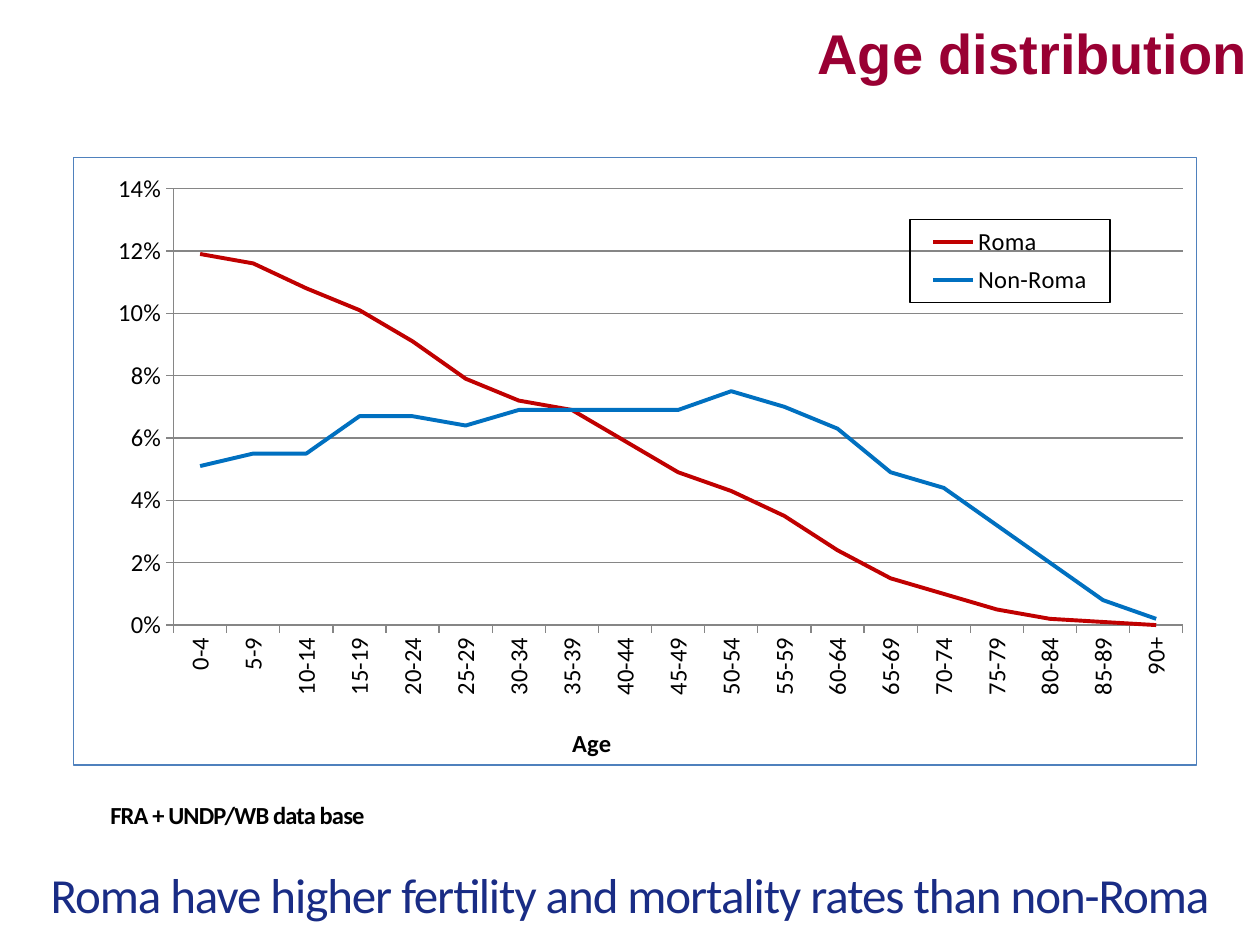
import pptx
import pptx.chart.data
import pptx.dml.color
import pptx.enum.chart
import pptx.enum.text
import pptx.oxml
import pptx.oxml.ns
import pptx.util

# Content
TITLE = "Age distribution"
SOURCE = "FRA + UNDP/WB data base"
TAKEAWAY = "Roma have higher fertility and mortality rates than non-Roma"
AGES = [f"{start}-{start + 4}" for start in range(0, 90, 5)] + ["90+"]
SERIES = [
    ("Roma", "C00000", [
        0.119, 0.116, 0.108, 0.101, 0.091, 0.079, 0.072, 0.069, 0.059, 0.049,
        0.043, 0.035, 0.024, 0.015, 0.01, 0.005, 0.002, 0.001, 0]),
    ("Non-Roma", "0070C0", [
        0.051, 0.055, 0.055, 0.067, 0.067, 0.064, 0.069, 0.069, 0.069, 0.069,
        0.075, 0.07, 0.063, 0.049, 0.044, 0.032, 0.02, 0.008, 0.002]),
]

# Places in px
SLIDE = (1260, 945)
TITLE_AT = (777, 0, 483, 105)
CHART_AT = (73, 157, 1124, 609)
NOTES_AT = (0, 766, 1260, 179)
PLOT_AT = (173, 188, 1011, 438)
LEGEND_AT = (910, 219, 200, 83)
AXIS_TITLE_AT = (568, 722)

GRID = "868686"


def px(length):
    return pptx.util.Emu(round(length * 914400 / 126))


def color(code):
    return pptx.dml.color.RGBColor.from_string(code)


def set_font(font, size, code="000000", bold=False, name="Calibri"):
    font.name, font.size, font.bold = name, pptx.util.Pt(size), bold
    font.color.rgb = color(code)


def add_span(para, text, size, code, bold, name="Calibri", spacing=0):
    span = para.add_run()
    span.text = text
    set_font(span.font, size, code, bold, name)
    if spacing:
        span.font._element.set("spc", str(spacing))


def set_line(line, code, width):
    line.color.rgb = color(code)
    line.width = pptx.util.Pt(width)


def chart_xml(markup):
    return pptx.oxml.parse_xml(
        markup.replace(">", f" {pptx.oxml.ns.nsdecls('c', 'a')}>", 1))


def outline(code):
    return chart_xml(f'<c:spPr><a:ln w="9525"><a:solidFill><a:srgbClr val="{code}"/>'
                     '</a:solidFill></a:ln></c:spPr>')


def place(element, index, at, inner=False):
    """Fix a chart part at a px position, as fractions of the chart."""
    for old in element.findall(pptx.oxml.ns.qn("c:layout")):
        element.remove(old)
    left, top, width, height = CHART_AT
    fractions = [(at[0] - left) / width, (at[1] - top) / height]
    fractions += [part / whole for part, whole in zip(at[2:], (width, height))]
    parts = '<c:layoutTarget val="inner"/>' if inner else ""
    parts += '<c:xMode val="edge"/><c:yMode val="edge"/>'
    for tag, value in zip("xywh", fractions):
        parts += f'<c:{tag} val="{value:.3f}"/>'
    element.insert(index, chart_xml(
        f"<c:layout><c:manualLayout>{parts}</c:manualLayout></c:layout>"))


deck = pptx.Presentation()
deck.slide_width, deck.slide_height = map(px, SLIDE)
page = deck.slides.add_slide(deck.slide_layouts[5])

# Title
title = page.shapes.title
title.left, title.top, title.width, title.height = map(px, TITLE_AT)
frame = title.text_frame
frame.vertical_anchor = pptx.enum.text.MSO_ANCHOR.MIDDLE
para = frame.paragraphs[0]
para.alignment = pptx.enum.text.PP_ALIGN.RIGHT
add_span(para, TITLE, 32, "990033", True, "Arial")

# Chart
data = pptx.chart.data.CategoryChartData(number_format="0%")
data.categories = AGES
for name, _, values in SERIES:
    data.add_series(name, values)
chart = page.shapes.add_chart(
    pptx.enum.chart.XL_CHART_TYPE.LINE, *map(px, CHART_AT), data).chart
chart.has_title = False
set_font(chart.font, 14)
chart.plots[0].vary_by_categories = False
for line, (_, code, _) in zip(chart.plots[0].series, SERIES):
    line.smooth = False
    line.marker.style = pptx.enum.chart.XL_MARKER_STYLE.NONE
    set_line(line.format.line, code, 2.25)
chart_element = chart._chartSpace.find(pptx.oxml.ns.qn("c:chart"))
chart_element.addnext(outline("4F81BD"))
place(chart_element.find(pptx.oxml.ns.qn("c:plotArea")), 0, PLOT_AT, inner=True)

# Axes
ages, shares = chart.category_axis, chart.value_axis
for axis in (ages, shares):
    axis.major_tick_mark = pptx.enum.chart.XL_TICK_MARK.OUTSIDE
    axis.minor_tick_mark = pptx.enum.chart.XL_TICK_MARK.NONE
    set_line(axis.format.line, GRID, 0.75)
    set_font(axis.tick_labels.font, 14)
ages._element.find(pptx.oxml.ns.qn("c:txPr"))[0].set("rot", "-5400000")
para = ages.axis_title.text_frame.paragraphs[0]
add_span(para, "Age", 14, "000000", True)
place(ages.axis_title._element, 1, AXIS_TITLE_AT)
shares.minimum_scale, shares.maximum_scale, shares.major_unit = 0, 0.14, 0.02
shares.tick_labels.number_format = "0%"
shares.tick_labels.number_format_is_linked = False
shares.has_major_gridlines = True
set_line(shares.major_gridlines.format.line, GRID, 0.75)

# Legend
chart.has_legend = True
legend = chart.legend
legend.position = pptx.enum.chart.XL_LEGEND_POSITION.RIGHT
legend.include_in_layout = False
set_font(legend.font, 14)
place(legend._element, 1, LEGEND_AT)
legend._element.find(pptx.oxml.ns.qn("c:overlay")).addnext(outline("000000"))

# Source and takeaway
box = page.shapes.add_textbox(*map(px, NOTES_AT))
frame = box.text_frame
frame.word_wrap = True
frame.margin_top = px(34)
para = frame.paragraphs[0]
para._p.get_or_add_pPr().set("marL", str(px(98)))
add_span(para, SOURCE, 14, "000000", True, spacing=-50)
para = frame.add_paragraph()
para.alignment = pptx.enum.text.PP_ALIGN.CENTER
para.space_before = pptx.util.Pt(20)
add_span(para, TAKEAWAY, 28, "192C85", False, spacing=-60)

deck.save("out.pptx")
